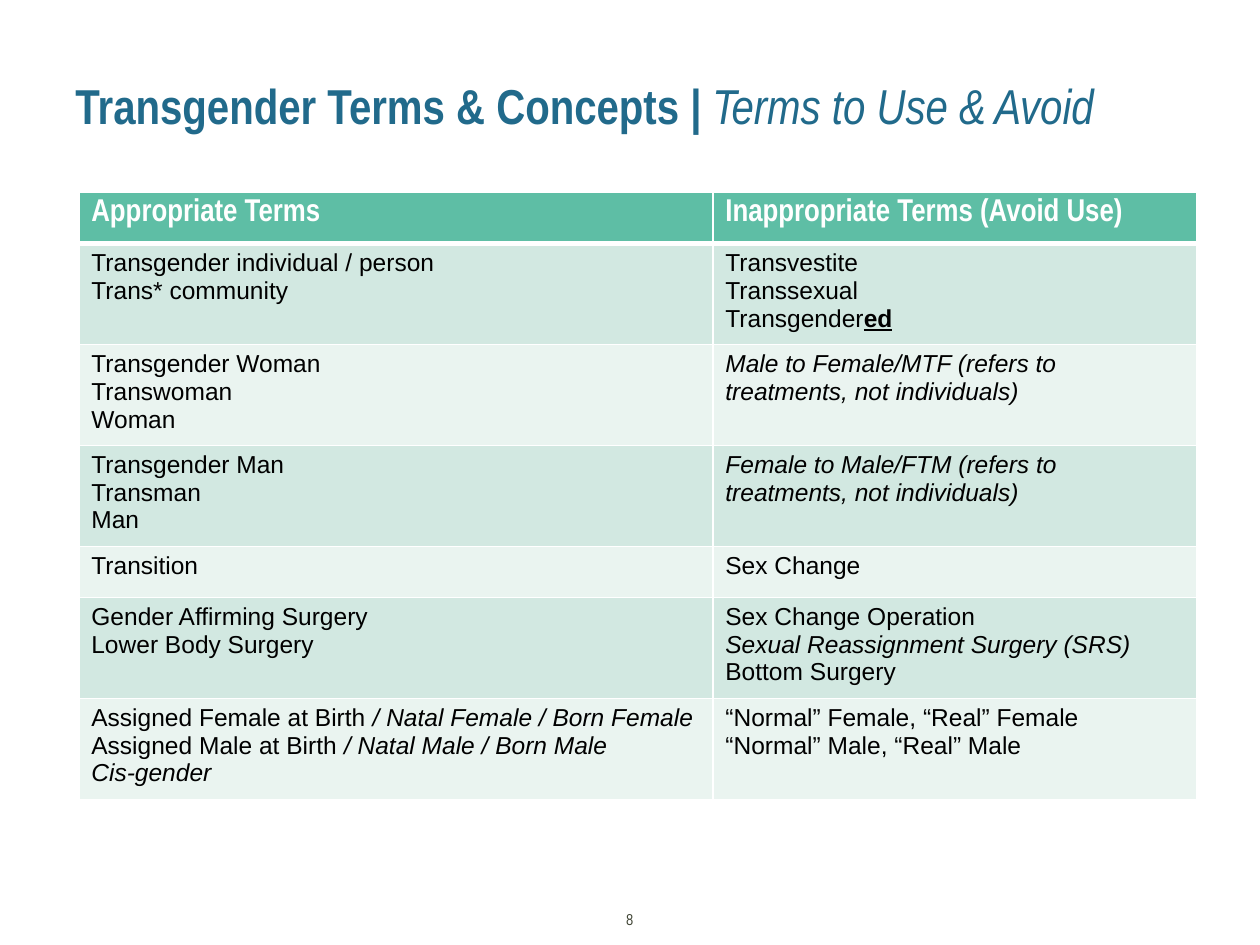
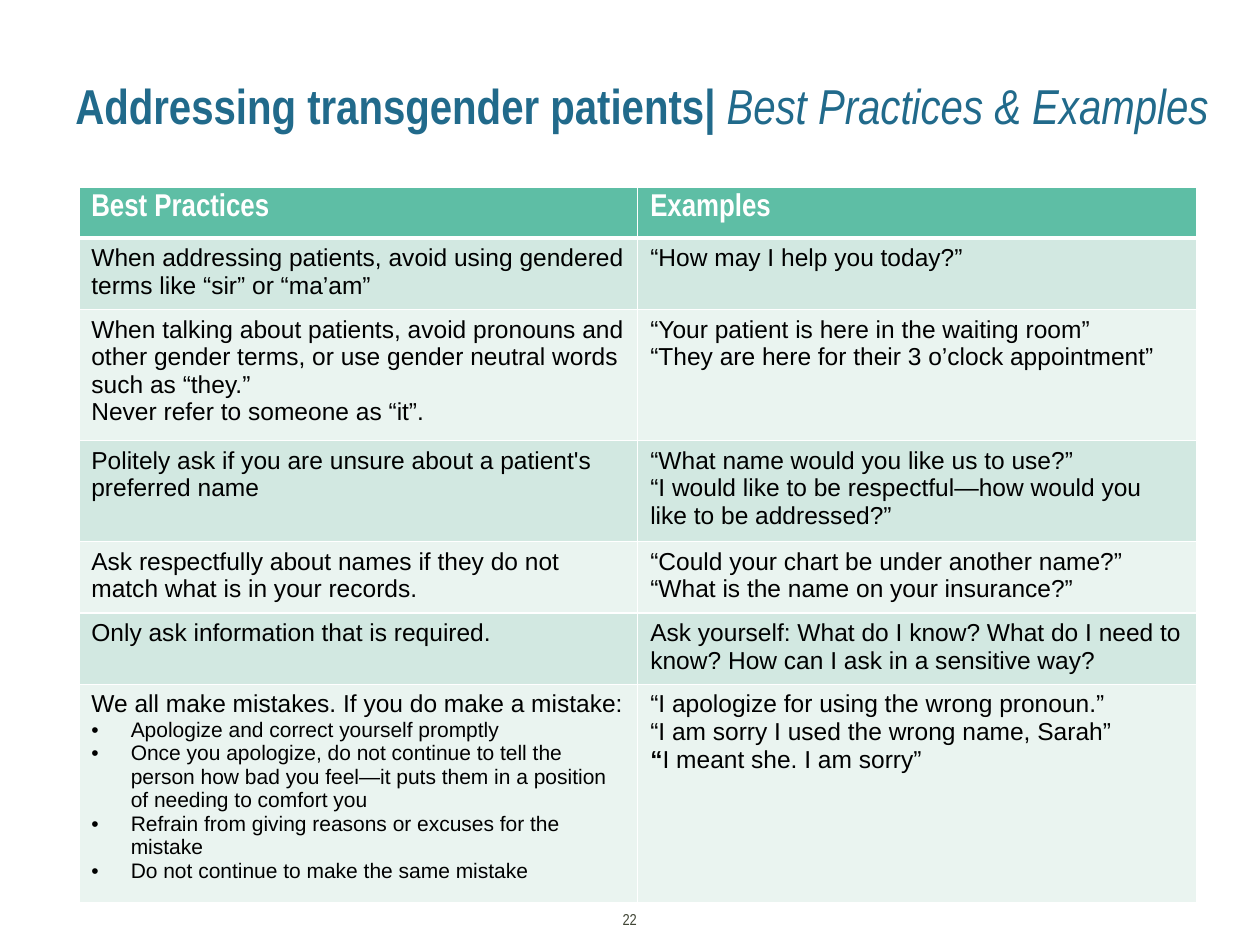
from dataclasses import dataclass
from typing import NamedTuple

from lxml.etree import SubElement
from pptx import Presentation
from pptx.dml.color import RGBColor
from pptx.enum.text import MSO_ANCHOR, PP_ALIGN
from pptx.oxml.ns import qn
from pptx.util import Pt


@dataclass(frozen=True)
class Theme:
    title: str = "216A8B"
    header: str = "5EBEA5"
    bands: tuple[str, str] = ("D2E8E1", "EAF4F0")
    white: str = "FFFFFF"
    body: str = "000000"
    footer: str = "414636"
    heading_font: str = "Arial Narrow"
    body_font: str = "Arial"
    title_size: float = 28
    header_size: float = 18
    body_size: float = 14
    bullet_size: float = 12
    footer_size: float = 9
    thin_rule: float = 1
    thick_rule: float = 3


THEME = Theme()


class Style(NamedTuple):
    font: str
    size: float
    color: str


TITLE = Style(THEME.heading_font, THEME.title_size, THEME.title)
HEADER = Style(THEME.heading_font, THEME.header_size, THEME.white)
BODY = Style(THEME.body_font, THEME.body_size, THEME.body)
BULLET = Style(THEME.body_font, THEME.bullet_size, THEME.body)
FOOTER = Style(THEME.heading_font, THEME.footer_size, THEME.footer)


class Span(NamedTuple):
    text: str
    bold: bool = False
    italic: bool = False
    underline: bool = False


@dataclass(frozen=True)
class Line:
    spans: tuple[Span, ...]
    bulleted: bool = False


Cell = tuple[Line, ...]


class Row(NamedTuple):
    height: float
    left: Cell
    right: Cell


@dataclass(frozen=True)
class TermsPage:
    title: str
    subtitle: str
    number: int
    top: float
    widths: tuple[float, float]
    headings: tuple[str, str]
    rows: tuple[Row, ...]


def plain(*texts: str) -> Cell:
    return tuple(Line((Span(text),)) for text in texts)


def italic(text: str) -> Cell:
    return (Line((Span(text, italic=True),)),)


def bullets(*texts: str) -> Cell:
    return tuple(Line((Span(text),), bulleted=True) for text in texts)


def mixed(*spans: Span) -> Cell:
    return (Line(spans),)


def treatment(text: str) -> Cell:
    return italic(f"{text} (refers to treatments, not individuals)")


HEADER_HEIGHT = 29.2
TABLE_LEFT = 45

PAGES = (
    TermsPage(
        "Transgender Terms & Concepts | ", "Terms to Use & Avoid", 8,
        109.9, (362.3, 276.5),
        ("Appropriate Terms", "Inappropriate Terms (Avoid Use)"),
        (
            Row(57.7, plain("Transgender individual / person", "Trans* community"),
                plain("Transvestite", "Transsexual")
                + mixed(Span("Transgender"), Span("ed", bold=True, underline=True))),
            Row(57.7, plain("Transgender Woman", "Transwoman", "Woman"),
                treatment("Male to Female/MTF")),
            Row(57.7, plain("Transgender Man", "Transman", "Man"),
                treatment("Female to Male/FTM")),
            Row(29.2, plain("Transition"), plain("Sex Change")),
            Row(57.7, plain("Gender Affirming Surgery", "Lower Body Surgery"),
                plain("Sex Change Operation")
                + italic("Sexual Reassignment Surgery (SRS)")
                + plain("Bottom Surgery")),
            Row(57.7,
                mixed(Span("Assigned Female at Birth "),
                      Span("/ Natal Female / Born Female", italic=True))
                + mixed(Span("Assigned Male at Birth "),
                        Span("/ Natal Male / Born Male", italic=True))
                + italic("Cis-gender"),
                plain("“Normal” Female, “Real” Female", "“Normal” Male, “Real” Male")),
        ),
    ),
    TermsPage(
        "Addressing transgender patients| ", "Best Practices & Examples", 22,
        106.9, (319.4, 319.4),
        ("Best Practices", "Examples"),
        (
            Row(40.8,
                plain("When addressing patients, avoid using gendered terms like “sir” or “ma’am”"),
                plain("“How may I help you today?”")),
            Row(74.8,
                plain("When talking about patients, avoid pronouns and other gender terms, "
                      "or use gender neutral words such as “they.”",
                      "Never refer to someone as “it”."),
                plain("“Your patient is here in the waiting room”",
                      "“They are here for their 3 o’clock appointment”")),
            Row(57.7,
                plain("Politely ask if you are unsure about a patient's preferred name"),
                plain("“What name would you like us to use?”",
                      "“I would like to be respectful—how would you like to be addressed?”")),
            Row(40.8,
                plain("Ask respectfully about names if they do not match what is in your records."),
                plain("“Could your chart be under another name?”",
                      "“What is the name on your insurance?”")),
            Row(40.8,
                plain("Only ask information that is required."),
                plain("Ask yourself: What do I know? What do I need to know? "
                      "How can I ask in a sensitive way?")),
            Row(124.6,
                plain("We all make mistakes. If you do make a mistake:")
                + bullets("Apologize and correct yourself promptly",
                          "Once you apologize, do not continue to tell the person how bad "
                          "you feel—it puts them in a position of needing to comfort you",
                          "Refrain from giving reasons or excuses for the mistake",
                          "Do not continue to make the same mistake"),
                plain("“I apologize for using the wrong pronoun.”",
                      "“I am sorry I used the wrong name, Sarah”")
                + mixed(Span("“", bold=True), Span("I meant she. I am sorry”"))),
        ),
    ),
)


def add_span(paragraph, span: Span, style: Style) -> None:
    run = paragraph.add_run()
    run.text = span.text
    font = run.font
    font.name = style.font
    font.size = Pt(style.size)
    font.color.rgb = RGBColor.from_string(style.color)
    font.bold = span.bold
    font.italic = span.italic
    font.underline = span.underline


def add_bullet(paragraph, indent: float = 22.5) -> None:
    properties = paragraph._p.get_or_add_pPr()
    properties.set("marL", str(Pt(indent)))
    properties.set("indent", str(Pt(-indent)))
    SubElement(properties, qn("a:buFont"), typeface=THEME.body_font)
    SubElement(properties, qn("a:buChar"), char="•")


def fill_text(frame, lines: Cell, style: Style) -> None:
    for index, line in enumerate(lines):
        paragraph = frame.add_paragraph() if index else frame.paragraphs[0]
        if line.bulleted:
            add_bullet(paragraph)
        for span in line.spans:
            add_span(paragraph, span, BULLET if line.bulleted else style)


def add_label(slide, left: float, top: float, width: float, height: float,
              line: Cell, style: Style):
    frame = slide.shapes.add_textbox(Pt(left), Pt(top), Pt(width), Pt(height)).text_frame
    frame.word_wrap = True
    frame.vertical_anchor = MSO_ANCHOR.MIDDLE
    fill_text(frame, line, style)
    return frame.paragraphs[0]


def draw_borders(cell, top: float, bottom: float) -> None:
    properties = cell._tc.get_or_add_tcPr()
    sides = {"lnL": THEME.thin_rule, "lnR": THEME.thin_rule, "lnT": top, "lnB": bottom}
    for side, width in sides.items():
        border = SubElement(properties, qn(f"a:{side}"), w=str(Pt(width)))
        solid = SubElement(border, qn("a:solidFill"))
        SubElement(solid, qn("a:srgbClr"), val=THEME.white)


def add_terms_table(slide, page: TermsPage) -> None:
    headings = Row(HEADER_HEIGHT, *(mixed(Span(text, bold=True)) for text in page.headings))
    rows = (headings, *page.rows)
    table = slide.shapes.add_table(
        len(rows), len(page.widths), Pt(TABLE_LEFT), Pt(page.top),
        Pt(sum(page.widths)), Pt(sum(row.height for row in rows))).table
    table.first_row = False
    table.horz_banding = False
    for column, width in zip(table.columns, page.widths):
        column.width = Pt(width)
    for index, row in enumerate(rows):
        table.rows[index].height = Pt(row.height)
        is_header = index == 0
        color = THEME.header if is_header else THEME.bands[(index - 1) % 2]
        for column, lines in enumerate((row.left, row.right)):
            cell = table.cell(index, column)
            draw_borders(cell, THEME.thick_rule if index == 1 else THEME.thin_rule,
                         THEME.thick_rule if is_header else THEME.thin_rule)
            cell.fill.solid()
            cell.fill.fore_color.rgb = RGBColor.from_string(color)
            fill_text(cell.text_frame, lines, HEADER if is_header else BODY)


def add_page(deck, page: TermsPage) -> None:
    slide = deck.slides.add_slide(deck.slide_layouts[6])
    heading = mixed(Span(page.title, bold=True), Span(page.subtitle, italic=True))
    add_label(slide, 36, 43.2, 672, 38, heading, TITLE).line_spacing = 0.9
    add_terms_table(slide, page)
    number = add_label(slide, 341.5, 516.4, 36.7, 18, plain(str(page.number)), FOOTER)
    number.alignment = PP_ALIGN.CENTER


def main() -> None:
    deck = Presentation()
    deck.slide_width, deck.slide_height = Pt(720), Pt(540)
    for page in PAGES:
        add_page(deck, page)
    deck.save("out.pptx")


if __name__ == "__main__":
    main()
